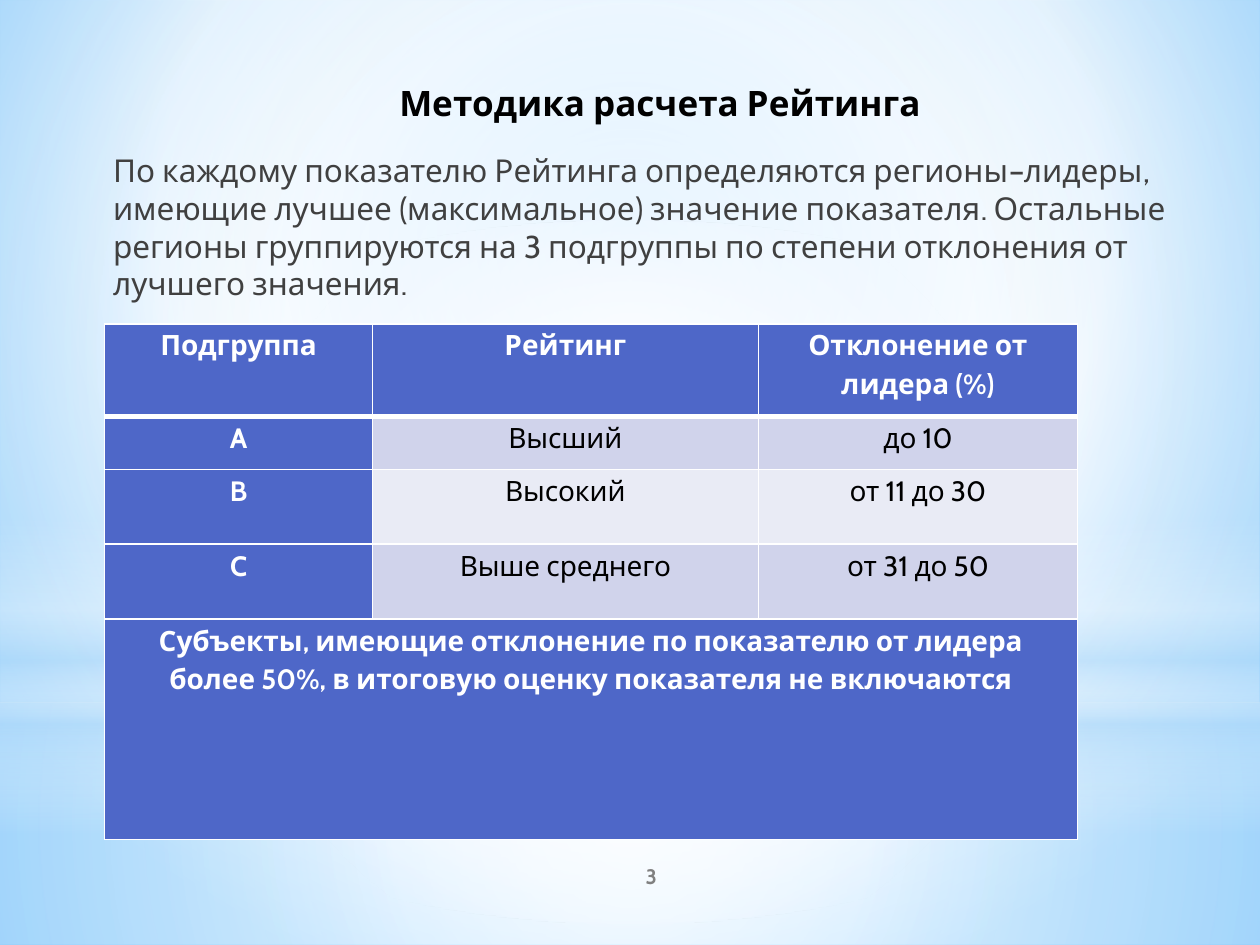
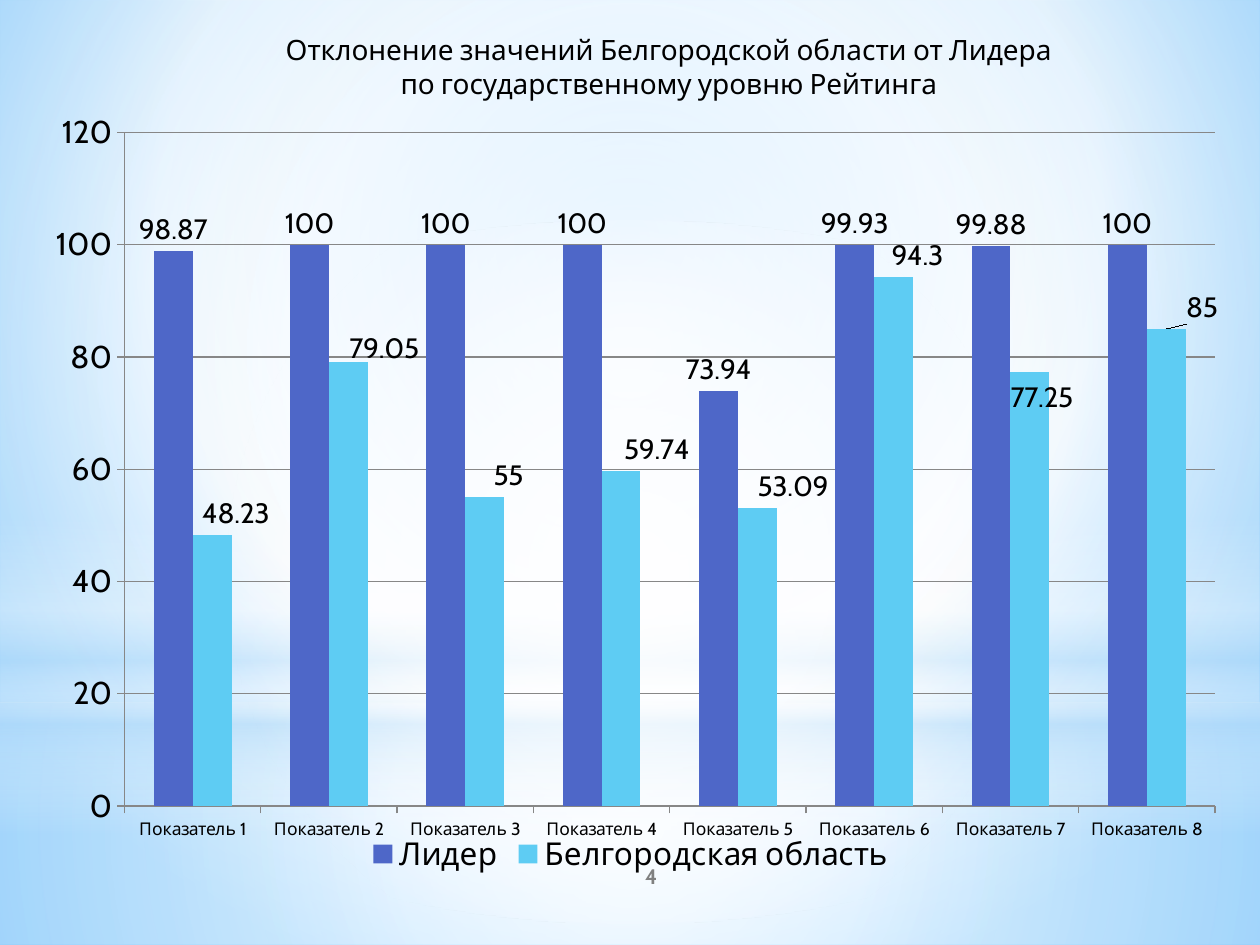
"""Builds two slides on the rating method and on the region's gap to the leader."""
from dataclasses import dataclass

from lxml import etree
from pptx import Presentation
from pptx import util as u
from pptx.chart import data as chart_data
from pptx.dml.color import RGBColor
from pptx.enum import chart as charts, shapes, text
from pptx.oxml import ns


@dataclass(frozen=True)
class Theme:
    font: str = "Cabin"
    ink: str = "000000"
    body: str = "404040"
    muted: str = "808080"
    white: str = "FFFFFF"
    mist: str = "B4DCFA"
    primary: str = "4E67C8"
    accent: str = "5ECCF3"
    bands: tuple = ("D0D3EB", "E9EBF5")
    axis: str = "878787"
    heading_size: int = 20
    body_size: int = 18
    table_size: int = 16
    label_size: int = 16
    category_size: int = 10
    number_size: int = 12


T = Theme()
SLIDE_SIZE = (25.4, 19.05)
CENTRE = (50, 50, 50, 50)
SKY = ([(0, "9ED5FF", 100), (60, T.white, 100), (100, "5BB9FF", 100)], (20, 10, 20, 60))
RECTANGLE, OVAL = shapes.MSO_SHAPE.RECTANGLE, shapes.MSO_SHAPE.OVAL
GLOWS = [
    (RECTANGLE, (0, 14.17, 25.4, 4.88),
     [(0, T.white, 91), (37, T.white, 76), (100, T.mist, 79)], CENTRE),
    (RECTANGLE, (0, 0, 25.4, 14.17),
     [(0, T.white, 89), (48, T.white, 62), (100, T.mist, 79)], CENTRE),
    (RECTANGLE, (0, 10.46, 25.4, 6.35),
     [(0, T.white, 0), (29, T.white, 30), (45, T.mist, 40), (55, T.white, 26),
      (65, T.mist, 60), (100, T.white, 0)], None),
    (OVAL, (0, 4.45, 25.4, 14.17), [(0, T.white, 100), (56, T.white, 0)], CENTRE),
]
NUMBER_BOX = (10.59, 17.15, 5.08, 1.02)

METHOD_TITLE = ["Методика расчета Рейтинга"]
METHOD_TEXT = ["По каждому показателю Рейтинга определяются регионы–лидеры, имеющие лучшее "
               "(максимальное) значение показателя. Остальные регионы группируются на "
               "3 подгруппы по степени отклонения от лучшего значения."]
SUBGROUPS = [
    ("Подгруппа", "Рейтинг", "Отклонение от лидера (%)"),
    ("A", "Высший", "до 10"),
    ("B", "Высокий", "от 11 до 30"),
    ("C", "Выше среднего", "от 31 до 50"),
    ("Субъекты, имеющие отклонение по показателю от лидера более 50%, "
     "в итоговую оценку показателя не включаются", "", ""),
]
SUBGROUP_WIDTHS = (5.4, 7.78, 6.43)
SUBGROUP_HEIGHTS = (1.87, 1.06, 1.51, 1.51, 4.44)

GAP_TITLE = ["Отклонение значений Белгородской области от Лидера",
             "по государственному уровню Рейтинга"]
INDICATORS = [f"Показатель {n}" for n in range(1, 9)]
SCORES = {
    "Лидер": (98.87, 100, 100, 100, 73.94, 99.93, 99.88, 100),
    "Белгородская область": (48.23, 79.05, 55, 59.74, 53.09, 94.3, 77.25, 85),
}
REGION_LABEL_SHIFTS = [(0.02, 0), (0.03, 0.01), (0.02, 0), (0.03, 0),
                       (0.03, 0), (0.02, 0), (0.01, 0.06), (0.03, 0)]
PLOT_AREA = (0.075, 0.033, 0.916, 0.872)


def rgb(colour):
    """Turns a hex string into a colour."""
    return RGBColor.from_string(colour)


def cm(*lengths):
    """Turns numbers into lengths in centimetres."""
    return [u.Cm(length) for length in lengths]


def place(shape, box):
    """Moves and sizes a shape."""
    shape.left, shape.top, shape.width, shape.height = cm(*box)


def style_font(font, size, colour=T.ink, bold=False):
    """Applies the theme font."""
    font.name, font.size, font.bold = T.font, u.Pt(size), bold
    font.color.rgb = rgb(colour)


def write(frame, lines, size, colour=T.ink, bold=False, align=text.PP_ALIGN.CENTER,
          anchor=text.MSO_ANCHOR.TOP, spacing=1.0):
    """Writes one paragraph per line in the given format."""
    frame.word_wrap = True
    frame.vertical_anchor = anchor
    for i, line in enumerate(lines):
        paragraph = frame.paragraphs[0] if i == 0 else frame.add_paragraph()
        paragraph.alignment, paragraph.line_spacing = align, spacing
        run = paragraph.add_run()
        run.text = line
        style_font(run.font, size, colour, bold)


def sub(parent, tag, **attributes):
    """Adds a child element with attributes."""
    child = etree.SubElement(parent, ns.qn(tag))
    for name, value in attributes.items():
        child.set(name, str(value))
    return child


def fill_gradient(owner, fill, stops, focus):
    """Fills with a circular gradient around a focus, or a vertical one without it."""
    fill.solid()
    fill.fore_color.rgb = rgb(T.white)
    solid = owner.find(".//" + ns.qn("a:solidFill"))
    gradient = etree.Element(ns.qn("a:gradFill"), rotWithShape="1")
    stop_list = sub(gradient, "a:gsLst")
    for position, colour, opacity in stops:
        stop = sub(stop_list, "a:gs", pos=position * 1000)
        sub(sub(stop, "a:srgbClr", val=colour), "a:alpha", val=opacity * 1000)
    if focus:
        edges = {side: edge * 1000 for side, edge in zip("ltrb", focus)}
        sub(sub(gradient, "a:path", path="circle"), "a:fillToRect", **edges)
    else:
        sub(gradient, "a:lin", ang=5400000, scaled=0)
    solid.getparent().replace(solid, gradient)


def dress_master(master, slide):
    """Gives the master its sky and glows, drawn first on a slide."""
    fill_gradient(master.element, master.background.fill, *SKY)
    for i, (kind, box, stops, focus) in enumerate(GLOWS):
        glow = slide.shapes.add_shape(kind, *cm(*box))
        glow.shadow.inherit = False
        glow.line.fill.background()
        fill_gradient(glow.element, glow.fill, stops, focus)
        glow.element.nvSpPr.cNvPr.id = 20 + i
        master.shapes.element.insert(2 + i, glow.element)


def add_frame(slide, title, box, number, **title_format):
    """Adds the title and the slide number."""
    place(slide.shapes.title, box)
    slide.shapes.title.text_frame.auto_size = text.MSO_AUTO_SIZE.NONE
    write(slide.shapes.title.text_frame, title, **title_format)
    footer = slide.shapes.add_textbox(*cm(*NUMBER_BOX))
    write(footer.text_frame, [str(number)], size=T.number_size, colour=T.muted, bold=True,
          anchor=text.MSO_ANCHOR.MIDDLE)


def add_borders(cell, **widths):
    """Draws white cell borders, 1 pt unless a side has its own width."""
    properties = cell._tc.get_or_add_tcPr()
    for i, side in enumerate("LRTB"):
        line = etree.Element(ns.qn(f"a:ln{side}"), w=str(u.Pt(widths.get(side, 1))))
        sub(sub(line, "a:solidFill"), "a:srgbClr", val=T.white)
        properties.insert(i, line)


def add_subgroups(slide):
    """Adds the table of subgroups."""
    last = len(SUBGROUPS) - 1
    table = slide.shapes.add_table(
        len(SUBGROUPS), len(SUBGROUP_WIDTHS),
        *cm(2.11, 6.53, sum(SUBGROUP_WIDTHS), sum(SUBGROUP_HEIGHTS))).table
    for column, width in zip(table.columns, SUBGROUP_WIDTHS):
        column.width = u.Cm(width)
    for r, (row, height) in enumerate(zip(SUBGROUPS, SUBGROUP_HEIGHTS)):
        table.rows[r].height = u.Cm(height)
        for c, words in enumerate(row):
            cell = table.cell(r, c)
            strong = r in (0, last) or c == 0
            cell.margin_left = cell.margin_right = u.Cm(0.18)
            cell.margin_top = cell.margin_bottom = 0
            cell.fill.solid()
            cell.fill.fore_color.rgb = rgb(T.primary if strong else T.bands[(r - 1) % 2])
            add_borders(cell, **{0: {"B": 3}, 1: {"T": 3}}.get(r, {}))
            if words:
                write(cell.text_frame, [words], size=T.table_size, bold=strong,
                      colour=T.white if strong else T.ink, spacing=1.15)
    table.cell(last, 0).merge(table.cell(last, len(SUBGROUP_WIDTHS) - 1))


def add_layout(parent, index, **values):
    """Inserts a manual chart layout."""
    layout = etree.Element(ns.qn("c:layout"))
    manual = sub(layout, "c:manualLayout")
    for name, value in values.items():
        sub(manual, f"c:{name}", val=value)
    parent.insert(index, layout)


def add_scores(slide):
    """Adds the column chart of leader and region scores."""
    scores = chart_data.CategoryChartData()
    scores.categories = INDICATORS
    for name, values in SCORES.items():
        scores.add_series(name, values)
    chart = slide.shapes.add_chart(charts.XL_CHART_TYPE.COLUMN_CLUSTERED,
                                   *cm(0.71, 2.16, 24, 15.57), scores).chart
    style_font(chart.font, T.body_size)
    chart.has_title = False
    chart.has_legend = True
    chart.legend.position = charts.XL_LEGEND_POSITION.BOTTOM
    chart.legend.include_in_layout = False

    values, categories = chart.value_axis, chart.category_axis
    values.minimum_scale, values.maximum_scale, values.major_unit = 0, 120, 20
    values.has_major_gridlines = True
    values.tick_labels.number_format = "#,##0"
    values.tick_labels.number_format_is_linked = False
    style_font(categories.tick_labels.font, T.category_size)
    for axis in (values, categories):
        axis.major_tick_mark = charts.XL_TICK_MARK.OUTSIDE
    for line in (values.format.line, categories.format.line, values.major_gridlines.format.line):
        line.color.rgb, line.width = rgb(T.axis), u.Pt(0.75)

    plot = chart.plots[0]
    plot.gap_width, plot.overlap, plot.vary_by_categories = 150, 0, False
    for series, colour in zip(plot.series, (T.primary, T.accent)):
        series.format.fill.solid()
        series.format.fill.fore_color.rgb = rgb(colour)
        series.data_labels.show_value = True
        series.data_labels.position = charts.XL_LABEL_POSITION.OUTSIDE_END
        style_font(series.data_labels.font, T.label_size)

    region = plot.series[1]
    for i in range(len(REGION_LABEL_SHIFTS)):
        label = region.points[i].data_label
        style_font(label.font, T.label_size)
        label.position = charts.XL_LABEL_POSITION.OUTSIDE_END
    labels = region.data_labels._element.findall(ns.qn("c:dLbl"))
    for label, (x, y) in zip(labels, REGION_LABEL_SHIFTS):
        add_layout(label, 1, x=x, y=y)

    area = chart.element.find(".//" + ns.qn("c:plotArea"))
    for automatic in area.findall(ns.qn("c:layout")):
        area.remove(automatic)
    x, y, w, h = PLOT_AREA
    add_layout(area, 0, layoutTarget="inner", xMode="edge", yMode="edge", x=x, y=y, w=w, h=h)


def main():
    """Builds and saves the presentation."""
    prs = Presentation()
    prs.slide_width, prs.slide_height = cm(*SLIDE_SIZE)
    title_only = prs.slide_layouts[5]

    method = prs.slides.add_slide(title_only)
    dress_master(prs.slide_master, method)
    add_frame(method, METHOD_TITLE, (1.9, 1.52, 22.81, 1.12), 3, size=T.heading_size, bold=True)
    intro = method.shapes.add_textbox(*cm(1.9, 2.92, 22, 3.5)).text_frame
    intro.margin_left = u.Cm(0.38)
    write(intro, METHOD_TEXT, size=T.body_size, colour=T.body, align=text.PP_ALIGN.LEFT)
    add_subgroups(method)

    gap = prs.slides.add_slide(title_only)
    add_scores(gap)
    add_frame(gap, GAP_TITLE, (2.49, 0.53, 22, 1.63), 4, size=T.label_size)
    prs.save("out.pptx")


if __name__ == "__main__":
    main()
